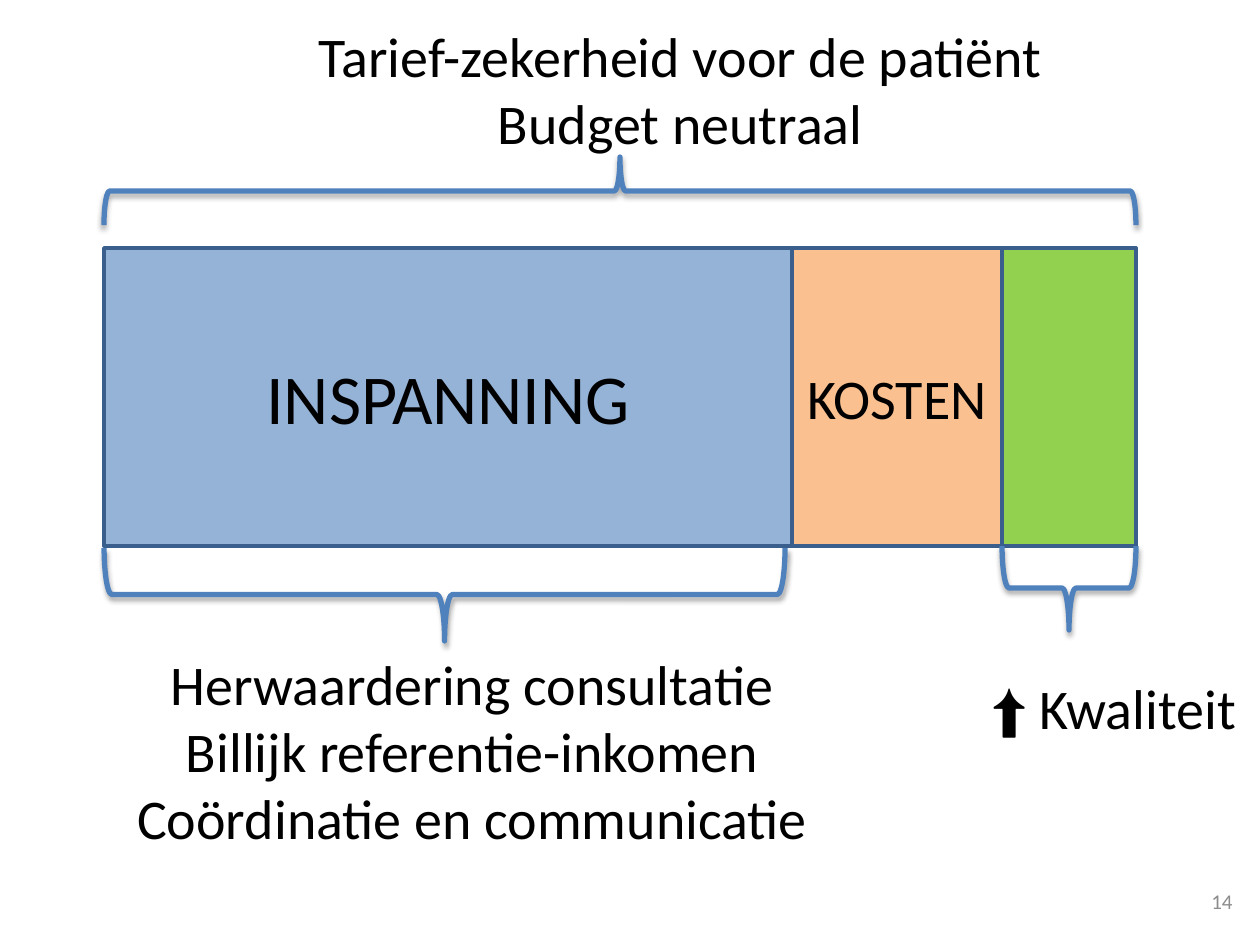
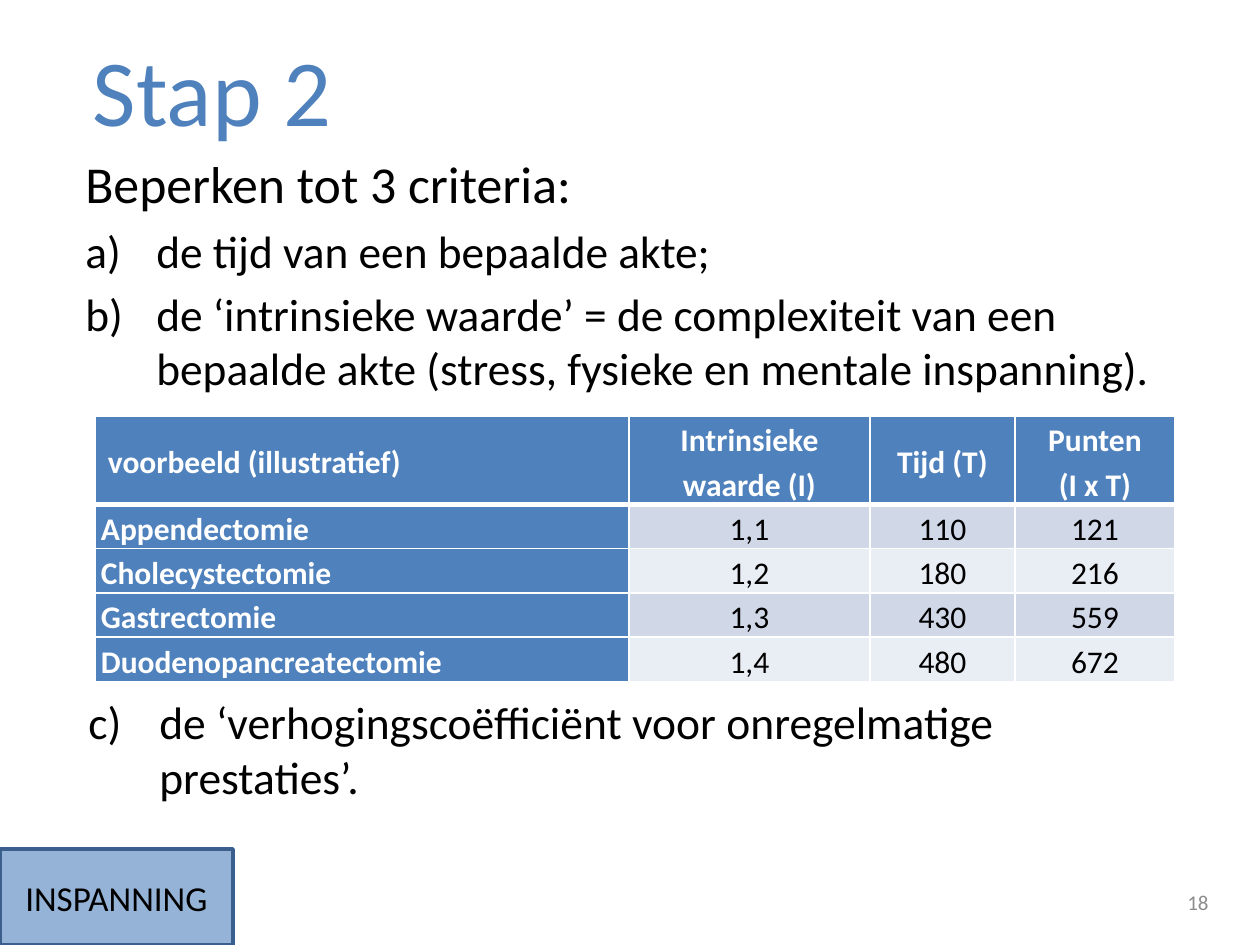
from itertools import accumulate
from lxml import etree
from pptx import Presentation
from pptx import util as u
from pptx.dml.color import RGBColor
from pptx.enum import shapes, text
from pptx.oxml.ns import qn

COLORS = {
    "ink": "000000", "white": "FFFFFF", "grey": "8C8C8C", "accent": "4F81BD",
    "edge": "3A5F8C", "effort": "95B3D7", "cost": "FAC090", "quality": "92D050",
    "band_dark": "D0D8E8", "band_light": "E9EDF4",
}
FONT = "Calibri"
PX = 914400 / 126
LEFT, CENTER, RIGHT = (text.PP_ALIGN.LEFT, text.PP_ALIGN.CENTER, text.PP_ALIGN.RIGHT)
TOP, MIDDLE = text.MSO_ANCHOR.TOP, text.MSO_ANCHOR.MIDDLE

BAR = {"left": 104, "top": 248, "height": 298}
PARTS = [
    ("INSPANNING", 688, "effort", 40),
    ("KOSTEN", 210, "cost", 32),
    ("", 134, "quality", 32),
]
BRACES = [
    ((104, 157, 1032, 68), 270),
    ((104, 548, 681, 93), 90),
    ((1002, 546, 134, 84), 90),
]
TARIFF_TITLE = ["Tarief-zekerheid voor de patiënt", "Budget neutraal"]
NOTES = [
    ((121, 643, 703, 217), ["Herwaardering consultatie", "Billijk referentie-inkomen",
                            "Coördinatie en communicatie"]),
    ((971, 667, 287, 81), ["⬆ Kwaliteit"]),
]
CRITERIA_INTRO = "Beperken tot 3 criteria:"
CRITERIA = [
    "de tijd van een bepaalde akte;",
    "de ‘intrinsieke waarde’ = de complexiteit van een bepaalde akte "
    "(stress, fysieke en mentale inspanning).",
]
LAST_CRITERION = "de ‘verhogingscoëfficiënt voor onregelmatige prestaties’."
COLUMNS = [534, 241, 145, 160]
HEADER_HEIGHT, ROW_HEIGHT = 86, 43
ROWS = [
    ["voorbeeld (illustratief)", "Intrinsieke waarde (I)", "Tijd (T)", "Punten\n(I x T)"],
    ["Appendectomie", "1,1", "110", "121"],
    ["Cholecystectomie", "1,2", "180", "216"],
    ["Gastrectomie", "1,3", "430", "559"],
    ["Duodenopancreatectomie", "1,4", "480", "672"],
]


def px(n):
    return u.Emu(round(n * PX))


def rgb(name):
    return RGBColor.from_string(COLORS[name])


def write(tf, lines, size=32, color="ink", bold=False, align=LEFT, anchor=TOP,
          wrap=True, before=0, spacing=None, indent=None, number_from=None, more=False):
    tf.word_wrap, tf.vertical_anchor = wrap, anchor
    tf.auto_size = text.MSO_AUTO_SIZE.NONE
    for i, line in enumerate(lines):
        p = tf.add_paragraph() if more or i else tf.paragraphs[0]
        p.alignment = align
        if before and (more or i):
            p.space_before = u.Pt(before)
        if spacing:
            p.line_spacing = spacing
        pPr = p._p.get_or_add_pPr()
        if indent:
            pPr.set("marL", str(px(indent[0])))
            pPr.set("indent", str(px(indent[1])))
        if number_from:
            bu = etree.SubElement(pPr, qn("a:buAutoNum"), type="alphaLcParenR")
            if number_from > 1:
                bu.set("startAt", str(number_from))
        r = p.add_run()
        r.text = line
        r.font.name, r.font.size, r.font.bold = FONT, u.Pt(size), bold
        r.font.color.rgb = rgb(color)


def add_text(s, box, lines, **fmt):
    tf = s.shapes.add_textbox(*map(px, box)).text_frame
    write(tf, lines, **fmt)
    return tf


def add_slide(prs, title, box, number, number_box, **fmt):
    s = prs.slides.add_slide(prs.slide_layouts[5])
    sp = s.shapes.title
    sp.left, sp.top, sp.width, sp.height = map(px, box)
    write(sp.text_frame, title, align=CENTER, wrap=False, **fmt)
    add_text(s, number_box, [number], size=12, color="grey", align=RIGHT, anchor=MIDDLE)
    return s


def add_block(s, box, label, fill, size):
    sp = s.shapes.add_shape(shapes.MSO_SHAPE.RECTANGLE, *map(px, box))
    sp.shadow.inherit = False
    sp.fill.solid()
    sp.fill.fore_color.rgb = rgb(fill)
    sp.line.color.rgb, sp.line.width = rgb("edge"), u.Pt(2)
    if label:
        write(sp.text_frame, [label], size=size, align=CENTER, anchor=MIDDLE)


def add_brace(s, box, rotation):
    x, y, w, h = box
    upright = (x + (w - h) / 2, y + (h - w) / 2, h, w)
    sp = s.shapes.add_shape(shapes.MSO_SHAPE.RIGHT_BRACE, *map(px, upright))
    sp.rotation = rotation
    sp.fill.background()
    sp.line.color.rgb, sp.line.width = rgb("accent"), u.Pt(3)
    sp.shadow.inherit = False
    effects = sp._element.spPr.find(qn("a:effectLst"))
    shadow = etree.SubElement(effects, qn("a:outerShdw"), blurRad=str(u.Pt(3.1)),
                              dist=str(u.Pt(1.8)), dir="5400000", rotWithShape="0")
    color = etree.SubElement(shadow, qn("a:srgbClr"), val=COLORS["ink"])
    etree.SubElement(color, qn("a:alpha"), val="35000")


def set_borders(cell, **widths):
    tcPr = cell._tc.get_or_add_tcPr()
    for i, side in enumerate("LRTB"):
        ln = etree.Element(qn(f"a:ln{side}"), w=str(u.Pt(widths.get(side, 1))))
        fill = etree.SubElement(ln, qn("a:solidFill"))
        etree.SubElement(fill, qn("a:srgbClr"), val=COLORS["white"])
        tcPr.insert(i, ln)


def add_points_table(s, left, top):
    height = HEADER_HEIGHT + ROW_HEIGHT * (len(ROWS) - 1)
    box = (left, top, sum(COLUMNS), height)
    table = s.shapes.add_table(len(ROWS), len(COLUMNS), *map(px, box)).table
    for column, width in zip(table.columns, COLUMNS):
        column.width = px(width)
    for i, row in enumerate(ROWS):
        table.rows[i].height = px(ROW_HEIGHT if i else HEADER_HEIGHT)
        for j, value in enumerate(row):
            cell = table.cell(i, j)
            head = i == 0 or j == 0
            band = "band_dark" if i % 2 else "band_light"
            cell.fill.solid()
            cell.fill.fore_color.rgb = rgb("accent" if head else band)
            cell.margin_left = px(6 if i or j else 13)
            cell.margin_right = px(6)
            cell.margin_top = cell.margin_bottom = 0
            write(cell.text_frame, value.split("\n"), size=18, bold=head, spacing=1.15,
                  color="white" if head else "ink", align=CENTER if j else LEFT)
            cell.vertical_anchor = MIDDLE
            set_borders(cell, T=3 if i == 1 else 1, B=1 if i else 3)


def build_tariff(prs):
    s = add_slide(prs, TARIFF_TITLE, (302, 15, 757, 149), "14", (951, 876, 294, 50))
    widths = [part[1] for part in PARTS]
    starts = accumulate(widths, initial=BAR["left"])
    for x, (label, width, fill, size) in zip(starts, PARTS):
        add_block(s, (x, BAR["top"], width, BAR["height"]), label, fill, size)
    for box, rotation in BRACES:
        add_brace(s, box, rotation)
    for box, lines in NOTES:
        add_text(s, box, lines, align=CENTER, wrap=False)


def build_step(prs):
    s = add_slide(prs, ["Stap 2"], (79, 26, 266, 127), "18", (927, 877, 294, 50),
                  size=54, color="accent")
    numbered = {"indent": (134, -71), "before": 5}
    tf = add_text(s, (10, 146, 1212, 270), [CRITERIA_INTRO], size=29.6, indent=(63, 0))
    write(tf, CRITERIA, size=25.9, number_from=1, more=True, **numbered)
    add_points_table(s, 95, 416)
    add_block(s, (0, 849, 233, 96), "INSPANNING", "effort", 20)
    add_text(s, (13, 688, 1032, 123), [LAST_CRITERION], size=26, number_from=3, **numbered)


def main():
    """Build the tariff slide and the criteria slide."""
    prs = Presentation()
    prs.slide_width, prs.slide_height = px(1260), px(945)
    build_tariff(prs)
    build_step(prs)
    prs.save("out.pptx")


if __name__ == "__main__":
    main()
